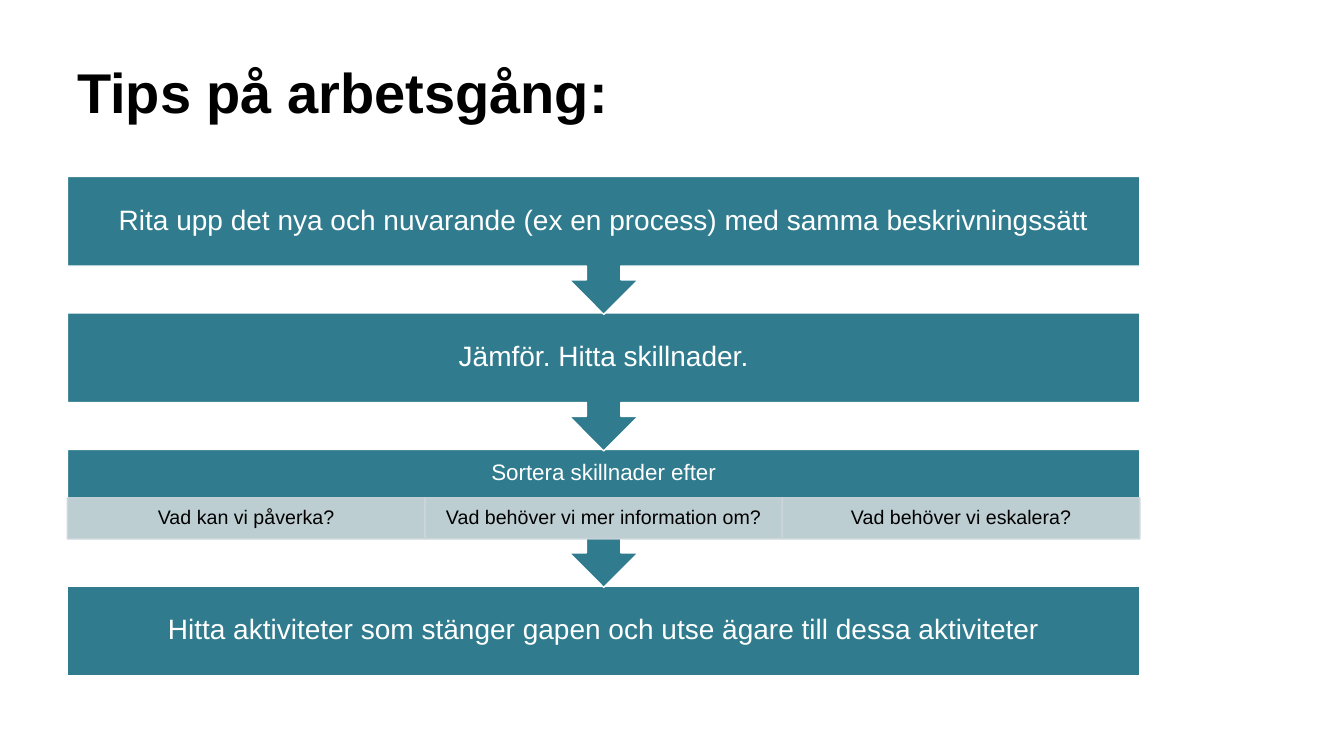
import pptx
import pptx.util
import pptx.dml.color
import pptx.enum.shapes
import pptx.enum.text
import pptx.oxml.ns
import lxml.etree

Pt = pptx.util.Pt
SHAPE = pptx.enum.shapes.MSO_SHAPE
ANCHOR = pptx.enum.text.MSO_ANCHOR
ALIGN = pptx.enum.text.PP_ALIGN

TEAL, GREY, WHITE, BLACK = "307C8E", "CDD7DB", "FFFFFF", "000000"
BOX_HEIGHT, CALLOUT_HEIGHT, STEP_PITCH, CELL_HEIGHT = 64, 98.6, 97.5, 29.5

STEPS = [
    ("Rita upp det nya och nuvarande (ex en process) med samma beskrivningssätt", []),
    ("Jämför. Hitta skillnader.", []),
    ("Sortera skillnader efter", [
        "Vad kan vi påverka?",
        "Vad behöver vi mer information om?",
        "Vad behöver vi eskalera?",
    ]),
    ("Hitta aktiviteter som stänger gapen och utse ägare till dessa aktiviteter", []),
]


def rgb(color):
    return pptx.dml.color.RGBColor.from_string(color)


def set_text(s, text, size, color, margins, spacing, bold=False):
    tf = s.text_frame
    tf.text = text
    tf.word_wrap = True
    tf.margin_left, tf.margin_top, tf.margin_right, tf.margin_bottom = map(Pt, margins)
    p = tf.paragraphs[0]
    p.line_spacing = spacing
    r = p.runs[0]
    r.font.name = "Arial"
    r.font.size = Pt(size)
    r.font.bold = bold
    r.font.color.rgb = rgb(color)
    return tf


def set_opacity(s, percent):
    for clr in s._element.spPr.iter(pptx.oxml.ns.qn("a:srgbClr")):
        alpha = lxml.etree.SubElement(clr, pptx.oxml.ns.qn("a:alpha"))
        alpha.set("val", str(percent * 1000))


def add_block(shapes, kind, box, fill, line, text, size, color, margins):
    s = shapes.add_shape(kind, *map(Pt, box))
    s.shadow.inherit = False
    s.fill.solid()
    s.fill.fore_color.rgb = rgb(fill)
    s.line.color.rgb = rgb(line)
    s.line.width = Pt(1)
    tf = set_text(s, text, size, color, margins, 0.9)
    tf.vertical_anchor = ANCHOR.MIDDLE
    tf.paragraphs[0].alignment = ALIGN.CENTER
    return s


def add_title(slide, left, top, width, height):
    s = slide.shapes.title
    s.left, s.top, s.width, s.height = map(Pt, (left, top, width, height))
    tf = set_text(s, "Tips på arbetsgång:", 40, BLACK, (7.2, 8, 7.2, 3.6), 1.1, True)
    tf.vertical_anchor = ANCHOR.TOP
    tf.paragraphs[0].alignment = ALIGN.LEFT


def add_cells(shapes, labels, left, top, width, height):
    cell_width = width / len(labels)
    for i, label in enumerate(labels):
        box = (left + i * cell_width, top, cell_width, height)
        s = add_block(shapes, SHAPE.RECTANGLE, box, GREY, GREY, label, 14, BLACK, (8, 1.5, 8, 1.5))
        set_opacity(s, 90)


def add_process(slide, left, top, width):
    shapes = slide.shapes
    last = len(STEPS) - 1
    for i, (text, labels) in reversed(list(enumerate(STEPS))):
        y = top + i * STEP_PITCH
        if i == last:
            kind, height = SHAPE.RECTANGLE, BOX_HEIGHT
        else:
            kind, height = SHAPE.DOWN_ARROW_CALLOUT, CALLOUT_HEIGHT
        margin = 8.5 if labels else 11.5
        bottom = margin + (CELL_HEIGHT if labels else 0)
        add_block(shapes, kind, (left, y, width, height), TEAL, WHITE, text,
                  16 if labels else 20, WHITE, (margin, margin, margin, bottom))
        if labels:
            add_cells(shapes, labels, left, y + BOX_HEIGHT - CELL_HEIGHT, width, CELL_HEIGHT)


def main():
    prs = pptx.Presentation()
    prs.slide_width, prs.slide_height = Pt(960), Pt(540)
    slide = prs.slides.add_slide(prs.slide_layouts[5])
    add_title(slide, 48, 28, 864, 90)
    add_process(slide, 48.2, 126, 766)
    prs.save("out.pptx")


if __name__ == "__main__":
    main()
